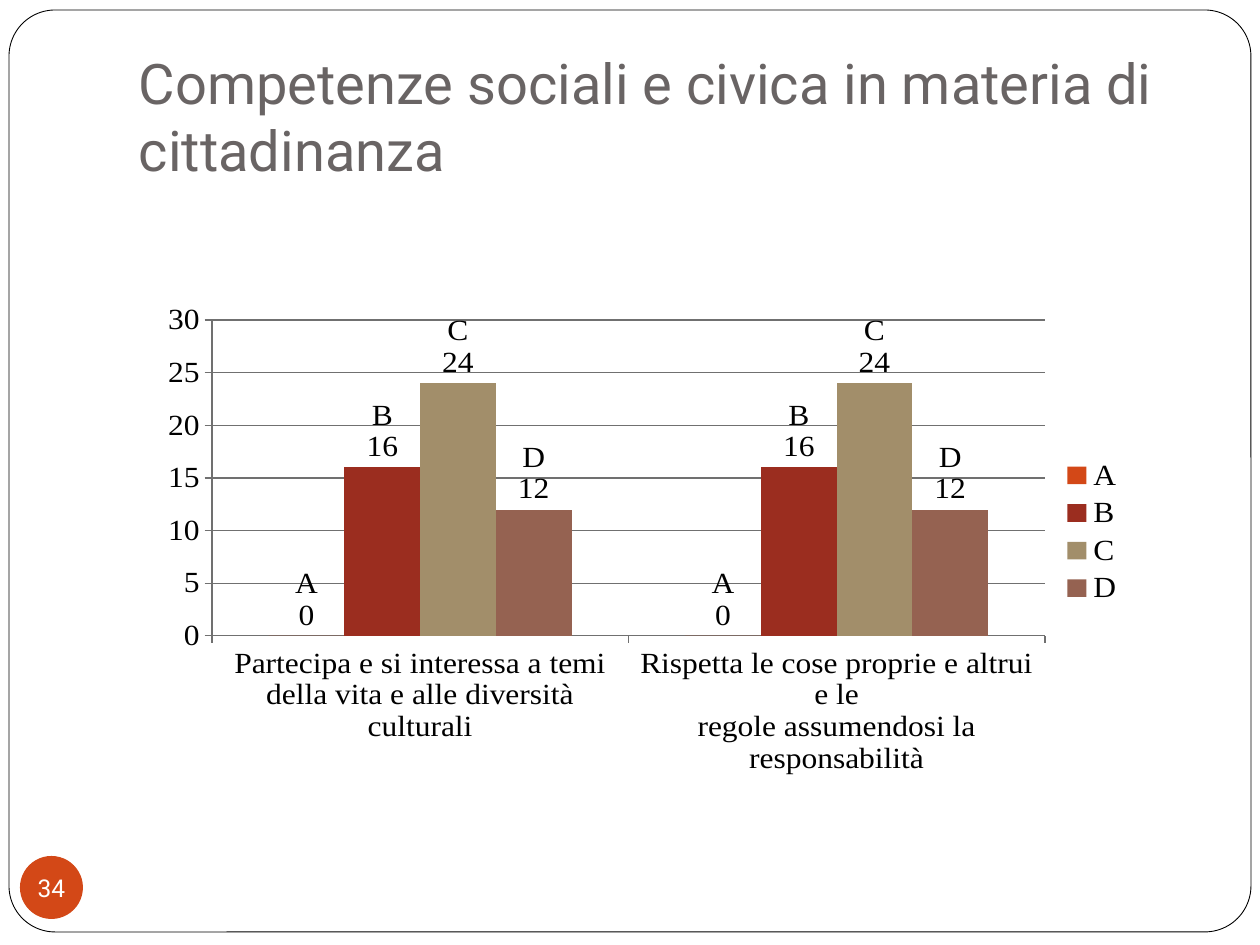
import pptx
import pptx.chart.data
import pptx.dml.color
import pptx.enum.chart
import pptx.enum.shapes
import pptx.enum.text
import pptx.oxml
import pptx.oxml.ns
import pptx.util

RGB = pptx.dml.color.RGBColor
WHITE = RGB(0xFF, 0xFF, 0xFF)
BLACK = RGB(0, 0, 0)
GREY = RGB(0x69, 0x64, 0x64)
LINE = RGB(0x70, 0x70, 0x70)
RED = RGB(0xD3, 0x48, 0x17)
WINE = RGB(0x9B, 0x2D, 0x1F)
SAND = RGB(0xA2, 0x8E, 0x6A)
BROWN = RGB(0x95, 0x62, 0x51)
SANS = "Roboto"
SERIF = "Times New Roman"
SHAPE = pptx.enum.shapes.MSO_SHAPE
ANCHOR = pptx.enum.text.MSO_ANCHOR
ALIGN = pptx.enum.text.PP_ALIGN
XL = pptx.enum.chart
SCALE = 914400 / 126

CHART = (154, 294, 983, 512)
PLOT = (58, 28, 833, 340)
CATS = [
    "Partecipa e si interessa a temi della vita e alle diversità culturali",
    "Rispetta le cose proprie e altrui e le\nregole assumendosi la responsabilità\n",
]
SERIES = [
    ("A", (0, 0), RED),
    ("B", (16, 16), WINE),
    ("C", (24, 24), SAND),
    ("D", (12, 12), BROWN),
]


def px(n):
    return pptx.util.Emu(round(n * SCALE))


def style(font, name, size, color):
    font.name = name
    font.size = pptx.util.Pt(size)
    font.color.rgb = color


def put(frame, text, size, color, align, insets):
    frame.margin_left, frame.margin_top, frame.margin_right, frame.margin_bottom = map(px, insets)
    para = frame.paragraphs[0]
    para.alignment = align
    run = para.add_run()
    run.text = text
    style(run.font, SANS, size, color)


def add_shape(slide, kind, box, fill):
    shape = slide.shapes.add_shape(kind, *map(px, box))
    shape.shadow.inherit = False
    shape.fill.solid()
    shape.fill.fore_color.rgb = fill
    shape.line.fill.background()
    return shape


def add_frame(slide):
    frame = add_shape(slide, SHAPE.ROUNDED_RECTANGLE, (9, 10, 1242, 922), WHITE)
    frame.adjustments[0] = 0.05
    frame.line.color.rgb = BLACK
    frame.line.width = pptx.util.Pt(0.5)
    tree = slide.shapes._spTree
    tree.remove(frame._element)
    tree.insert(2, frame._element)


def set_title(slide, text):
    title = slide.shapes.title
    title.left, title.top, title.width, title.height = map(px, (126, 38, 1071, 157))
    frame = title.text_frame
    frame.word_wrap = True
    frame.auto_size = pptx.enum.text.MSO_AUTO_SIZE.NONE
    frame.vertical_anchor = ANCHOR.BOTTOM
    put(frame, text, 32, GREY, ALIGN.LEFT, (13, 6, 13, 12))


def add_badge(slide, text):
    badge = add_shape(slide, SHAPE.OVAL, (20, 856, 63, 63), RED)
    badge.text_frame.word_wrap = False
    badge.text_frame.vertical_anchor = ANCHOR.MIDDLE
    put(badge.text_frame, text, 14, WHITE, ALIGN.CENTER, (0, 0, 0, 0))


def set_plot(chart):
    wide, high = CHART[2:]
    sizes = zip("xywh", PLOT, (wide, high, wide, high))
    parts = "".join(f'<c:{key} val="{n / full:.4f}"/>' for key, n, full in sizes)
    area = chart._chartSpace.chart.plotArea
    for old in area.findall(pptx.oxml.ns.qn("c:layout")):
        area.remove(old)
    area.insert(0, pptx.oxml.parse_xml(
        f'<c:layout {pptx.oxml.ns.nsdecls("c")}><c:manualLayout>'
        '<c:layoutTarget val="inner"/><c:xMode val="edge"/><c:yMode val="edge"/>'
        f'{parts}</c:manualLayout></c:layout>'))


def set_label(series):
    label = series.data_labels
    label.show_value = True
    label.show_series_name = True
    label.position = XL.XL_LABEL_POSITION.OUTSIDE_END
    style(label.font, SERIF, 18, BLACK)
    mark = label._element.find(pptx.oxml.ns.qn("c:showBubbleSize"))
    mark.addnext(pptx.oxml.parse_xml(
        f'<c:separator {pptx.oxml.ns.nsdecls("c")}>\n</c:separator>'))


def set_axis(axis):
    axis.major_tick_mark = XL.XL_TICK_MARK.OUTSIDE
    axis.minor_tick_mark = XL.XL_TICK_MARK.NONE
    axis.format.line.color.rgb = LINE
    style(axis.tick_labels.font, SERIF, 18, BLACK)


def add_chart(slide):
    data = pptx.chart.data.CategoryChartData()
    data.categories = CATS
    for name, vals, _ in SERIES:
        data.add_series(name, vals)
    box = map(px, CHART)
    chart = slide.shapes.add_chart(XL.XL_CHART_TYPE.COLUMN_CLUSTERED, *box, data).chart
    style(chart.font, SERIF, 18, BLACK)
    chart.has_title = False
    chart.has_legend = True
    chart.legend.position = XL.XL_LEGEND_POSITION.RIGHT
    chart.legend.include_in_layout = False
    style(chart.legend.font, SERIF, 18, BLACK)
    plot = chart.plots[0]
    plot.vary_by_categories = False
    plot.gap_width = 150
    plot.overlap = 0
    for series, (_, _, color) in zip(plot.series, SERIES):
        series.format.fill.solid()
        series.format.fill.fore_color.rgb = color
        set_label(series)
    for axis in (chart.category_axis, chart.value_axis):
        set_axis(axis)
    axis = chart.value_axis
    axis.minimum_scale, axis.maximum_scale, axis.major_unit = 0, 30, 5
    axis.has_major_gridlines = True
    axis.major_gridlines.format.line.color.rgb = LINE
    set_plot(chart)


def main():
    deck = pptx.Presentation()
    deck.slide_width, deck.slide_height = px(1260), px(945)
    slide = deck.slides.add_slide(deck.slide_layouts[5])
    add_frame(slide)
    set_title(slide, "Competenze sociali e civica in materia di cittadinanza")
    add_badge(slide, "34")
    add_chart(slide)
    deck.save("out.pptx")


if __name__ == "__main__":
    main()
